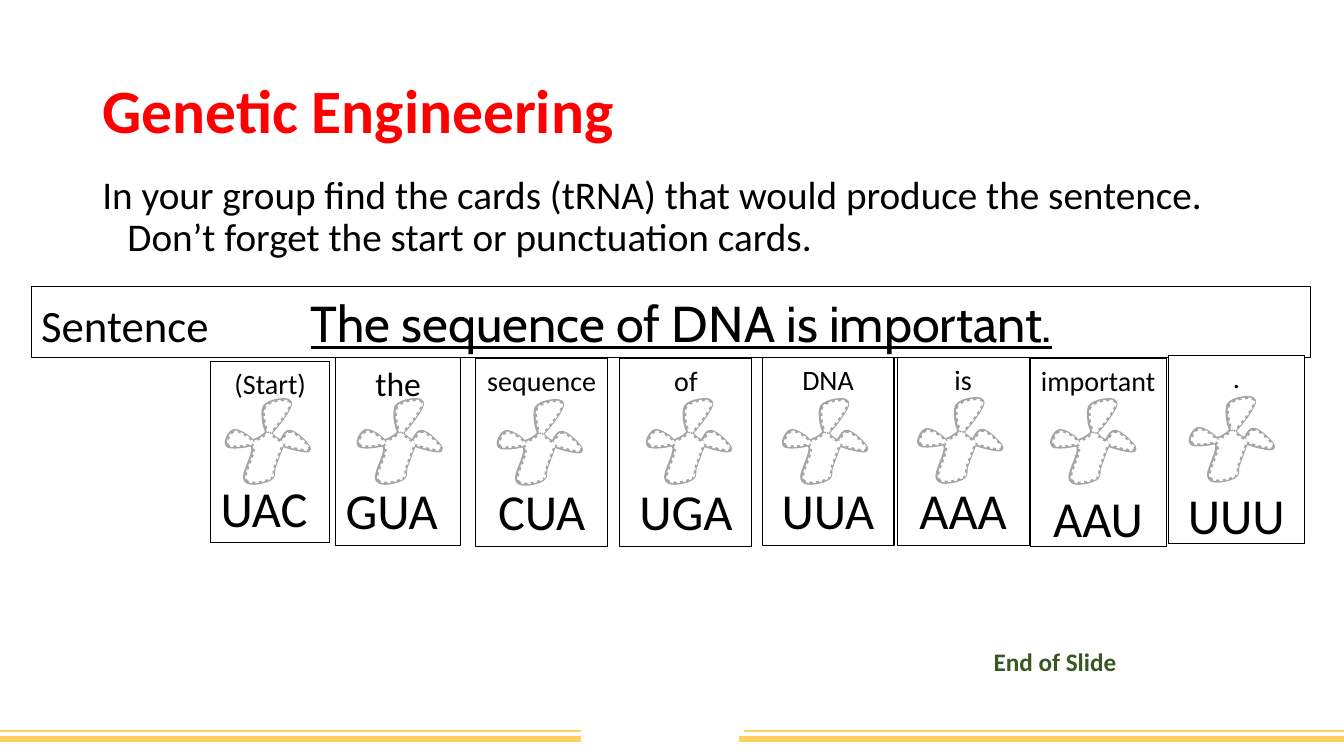
from dataclasses import dataclass

from lxml import etree
from pptx import Presentation
from pptx.dml.color import RGBColor
from pptx.enum import dml, shapes, text
from pptx.oxml.ns import qn
from pptx.util import Pt


@dataclass(frozen=True)
class Theme:
    ink: str = "000000"
    paper: str = "FFFFFF"
    heading: str = "FF0000"
    footer: str = "385723"
    bar: str = "FFD05B"
    leaf: str = "A5A5A5"
    body_font: str = "Calibri"
    answer_font: str = "Cabin"
    title_size: float = 44
    body_size: float = 28
    label_size: float = 32
    answer_size: float = 36
    footer_size: float = 18


# Cloverleaf as a start point and Bézier triples, in hundredths of an inch
LEAF_UNIT = Pt(0.72)
LEAF_START = (38, 8)
LEAF_CURVES = [
    (42, 5), (58, 0), (61, 5),
    (64, 10), (53, 29), (55, 37),
    (57, 44), (70, 51), (75, 51),
    (79, 51), (84, 39), (80, 38),
    (75, 37), (57, 39), (47, 47),
    (38, 54), (23, 77), (23, 82),
    (22, 87), (43, 83), (46, 77),
    (48, 71), (45, 54), (38, 48),
    (31, 41), (5, 37), (2, 38),
    (0, 39), (17, 55), (22, 53),
    (27, 50), (32, 30), (35, 21),
    (38, 12), (34, 11), (38, 8),
]
LEAF_ANGLE = 183.1

# word, word size, codon, gap above codon, card box, leaf corner
CARDS = [
    ("(Start)", 20, "UAC", 44.4, (150.5, 258.5, 85, 128.9), (161, 284)),
    ("the", 24, "GUA", 44.4, (239.8, 255.6, 89.3, 133.9), (255.2, 284)),
    ("sequence", 20, "CUA", 49, (339.8, 256.3, 94.3, 133.9), (355.3, 284.7)),
    ("of", 20, "UGA", 49, (442.8, 256.3, 94.3, 133.9), (461.8, 284)),
    ("DNA", 20, "UUA", 49, (544.3, 255.6, 94.3, 133.9), (559, 284)),
    ("is", 20, "AAA", 49, (640.8, 255.6, 94.3, 133.9), (655.6, 283.3)),
    ("important", 20, "AAU", 53.9, (735.8, 256.3, 97.2, 133.9), (750.6, 284)),
    (".", 20, "UUU", 53.9, (834.5, 254.2, 97.2, 133.9), (849.6, 282.5)),
]
LEFT_CODONS = {"UAC", "GUA"}


class SlideBuilder:
    def __init__(self, slide, theme):
        self.slide = slide
        self.theme = theme

    def font(self, target, size, color, name=None, bold=False):
        target.size = Pt(size)
        target.name = name or self.theme.body_font
        target.bold = bold
        target.color.rgb = RGBColor.from_string(color)

    def bar(self, start, end, y, weight):
        line = self.slide.shapes.add_connector(
            shapes.MSO_CONNECTOR.STRAIGHT, Pt(start), Pt(y), Pt(end), Pt(y))
        line.line.color.rgb = RGBColor.from_string(self.theme.bar)
        line.line.width = Pt(weight)
        etree.SubElement(line._element.spPr, qn("a:effectLst"))

    def text_box(self, words, box, size, color, bold=False,
                 anchor=text.MSO_ANCHOR.TOP):
        frame = self.slide.shapes.add_textbox(*map(Pt, box)).text_frame
        frame.word_wrap = True
        frame.vertical_anchor = anchor
        paragraph = frame.paragraphs[0]
        paragraph.text = words
        self.font(paragraph.font, size, color, bold=bold)
        return paragraph

    def rectangle(self, parent, box, fill=None):
        rect = parent.shapes.add_shape(shapes.MSO_SHAPE.RECTANGLE, *map(Pt, box))
        rect.shadow.inherit = False
        if fill:
            rect.fill.solid()
            rect.fill.fore_color.rgb = RGBColor.from_string(fill)
        else:
            rect.fill.background()
        rect.line.color.rgb = RGBColor.from_string(self.theme.ink)
        rect.line.width = Pt(0.75)
        rect.text_frame.word_wrap = True
        return rect.text_frame

    def sentence(self, label, answer, box, stops):
        """Label and underlined answer; tabs set where the underline runs."""
        frame = self.rectangle(self.slide, box)
        frame.vertical_anchor = text.MSO_ANCHOR.MIDDLE
        paragraph = frame.paragraphs[0]
        paragraph.alignment = text.PP_ALIGN.LEFT
        tabs = etree.SubElement(paragraph._p.get_or_add_pPr(), qn("a:tabLst"))
        for stop in stops:
            etree.SubElement(tabs, qn("a:tab"), pos=str(Pt(stop)), algn="l")
        label_run = paragraph.add_run()
        label_run.text = f"{label}\t"
        self.font(label_run.font, self.theme.label_size, self.theme.ink)
        answer_run = paragraph.add_run()
        answer_run.text = f"\t{answer}\t"
        self.font(answer_run.font, self.theme.answer_size, self.theme.ink,
                  self.theme.answer_font)
        answer_run.font.underline = True

    def leaf(self, parent, left, top, color, weight, dash=None):
        """Cloverleaf outline, with its control polygon turned into curves."""
        builder = parent.shapes.build_freeform(*LEAF_START, scale=LEAF_UNIT)
        builder.add_line_segments(LEAF_CURVES, close=True)
        outline = builder.convert_to_shape(Pt(left), Pt(top))
        geometry = next(outline._element.iter(qn("a:path")))
        segments = geometry.findall(qn("a:lnTo"))
        for i in range(0, len(segments), 3):
            curve = etree.Element(qn("a:cubicBezTo"))
            segments[i].addprevious(curve)
            for segment in segments[i:i + 3]:
                curve.append(segment[0])
                geometry.remove(segment)
        outline.rotation = LEAF_ANGLE
        outline.shadow.inherit = False
        outline.fill.solid()
        outline.fill.fore_color.rgb = RGBColor.from_string(self.theme.paper)
        outline.line.color.rgb = RGBColor.from_string(color)
        outline.line.width = Pt(weight)
        if dash:
            outline.line.dash_style = dash

    def card(self, word, word_size, codon, gap, box, leaf_corner):
        group = self.slide.shapes.add_group_shape()
        frame = self.rectangle(group, box, self.theme.paper)
        frame.vertical_anchor = text.MSO_ANCHOR.TOP
        word_line, codon_line = frame.paragraphs[0], frame.add_paragraph()
        word_line.text, codon_line.text = word, codon
        word_line.alignment = text.PP_ALIGN.CENTER
        word_line.space_after = Pt(10)
        codon_line.alignment = (text.PP_ALIGN.LEFT if codon in LEFT_CODONS
                                else text.PP_ALIGN.CENTER)
        codon_line.space_before = Pt(gap)
        self.font(word_line.font, word_size, self.theme.ink)
        self.font(codon_line.font, self.theme.answer_size, self.theme.ink)
        left, top = leaf_corner
        self.leaf(group, left, top, self.theme.leaf, 4.5)
        self.leaf(group, left + 0.4, top, self.theme.paper, 2.25,
                  dml.MSO_LINE.ROUND_DOT)


def main():
    deck = Presentation()
    deck.slide_width, deck.slide_height = Pt(960), Pt(540)
    theme = Theme()
    page = SlideBuilder(deck.slides.add_slide(deck.slide_layouts[6]), theme)

    for y, weight, right_start in ((527.8, 4.5, 527.8), (522, 1.5, 531.4)):
        page.bar(-0.7, 414.7, y, weight)
        page.bar(right_start, 960, y, weight)

    title = page.text_box("Genetic Engineering", (66, 28.8, 828, 104.4),
                          theme.title_size, theme.heading, True,
                          text.MSO_ANCHOR.MIDDLE)
    task = page.text_box(
        "In your group find the cards (tRNA) that would produce the sentence. "
        "Don’t forget the start or punctuation cards.",
        (66, 121.7, 828, 365), theme.body_size, theme.ink)
    title.line_spacing = task.line_spacing = 0.9
    hanging = task._p.get_or_add_pPr()
    hanging.set("marL", str(Pt(18)))
    hanging.set("indent", str(Pt(-18)))

    page.sentence("Sentence", "The sequence of DNA is important.",
                  (22.3, 204.5, 913.7, 51.1), (168, 192.5, 746))
    for card in CARDS:
        page.card(*card)
    page.text_box("End of Slide", (702.7, 457.9, 108, 28.8),
                  theme.footer_size, theme.footer, True)
    deck.save("out.pptx")


if __name__ == "__main__":
    main()
